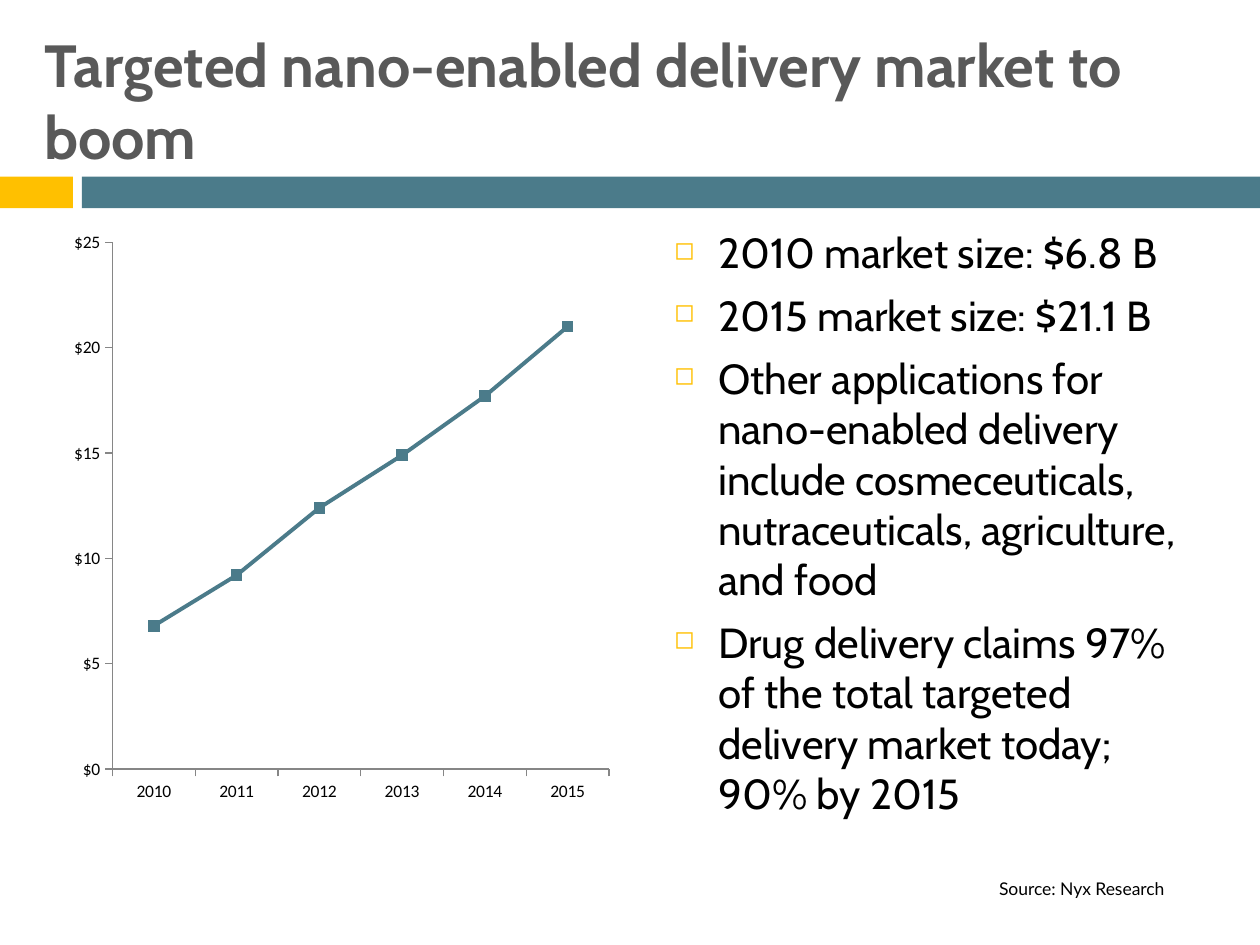
from dataclasses import dataclass

from lxml.etree import SubElement
from pptx import Presentation
from pptx.chart.data import CategoryChartData
from pptx.dml.color import RGBColor as RGB
from pptx.enum.chart import XL_CHART_TYPE as ChartType
from pptx.enum.chart import XL_MARKER_STYLE as Marker
from pptx.enum.chart import XL_TICK_MARK as Tick
from pptx.enum.shapes import MSO_SHAPE as Shape
from pptx.enum.text import MSO_ANCHOR as Anchor
from pptx.oxml.ns import qn
from pptx.util import Cm, Pt

# Content
TITLE = "Targeted nano-enabled delivery market to boom"
POINTS = [
    "2010 market size: $6.8 B",
    "2015 market size: $21.1 B",
    "Other applications for nano-enabled delivery include cosmeceuticals, "
    "nutraceuticals, agriculture, and food",
    "Drug delivery claims 97% of the total targeted delivery market today; 90% by 2015",
]
SOURCE = "Source: Nyx Research"
MARKET = {"2010": 6.8, "2011": 9.2, "2012": 12.4, "2013": 14.9, "2014": 17.7, "2015": 21}


@dataclass(frozen=True)
class Theme:
    teal: str = "4B7B8A"
    gold: str = "FFC000"
    grey: str = "595959"
    axis: str = "868686"
    black: str = "000000"
    font: str = "Cabin"
    axis_font: str = "Calibri"
    source_font: str = "Lato"
    title_size: int = 34
    body_size: int = 24
    small_size: int = 10


THEME = Theme()

# Layout in centimetres
PAGE_W, PAGE_H = 25.4, 19.05
BAND_TOP, BAND_H = 3.56, 0.64
GOLD_W, BAND_GAP = 1.47, 0.18
CONTENT_TOP = 4.45
BULLET_INDENT = 0.89


def style_font(font, size, color, name=THEME.font, bold=False):
    font.size, font.name, font.bold = Pt(size), name, bold
    font.color.rgb = RGB.from_string(color)


def add_band(page, left, width, color):
    band = page.shapes.add_shape(Shape.RECTANGLE, Cm(left), Cm(BAND_TOP), Cm(width), Cm(BAND_H))
    band.shadow.inherit = False
    band.fill.solid()
    band.fill.fore_color.rgb = RGB.from_string(color)
    band.line.fill.background()


def add_text(page, area, lines, size, color, name=THEME.font, bold=False, wrap=True):
    frame = page.shapes.add_textbox(*map(Cm, area)).text_frame
    frame.word_wrap = wrap
    frame.text = "\n".join(lines)
    for para in frame.paragraphs:
        for span in para.runs:
            style_font(span.font, size, color, name, bold)
    return frame


def add_bullet(para):
    para.space_before = Pt(7)
    props = para._p.get_or_add_pPr()
    props.set("marL", str(Cm(BULLET_INDENT)))
    props.set("indent", str(-Cm(BULLET_INDENT)))
    SubElement(SubElement(props, qn("a:buClr")), qn("a:srgbClr"), val=THEME.gold)
    SubElement(props, qn("a:buSzPct"), val="60000")
    SubElement(props, qn("a:buChar"), char="◻")


def add_market_chart(page, area):
    data = CategoryChartData()
    data.categories = list(MARKET)
    data.add_series("Series 1", list(MARKET.values()))
    chart = page.shapes.add_chart(ChartType.LINE_MARKERS, *map(Cm, area), data).chart
    chart.has_legend = chart.has_title = False
    style_font(chart.font, THEME.small_size, THEME.black)

    # Axes
    for axis in (chart.category_axis, chart.value_axis):
        axis.has_major_gridlines = False
        axis.major_tick_mark, axis.minor_tick_mark = Tick.OUTSIDE, Tick.NONE
        axis.format.line.color.rgb = RGB.from_string(THEME.axis)
        axis.format.line.width = Pt(0.75)
        style_font(axis.tick_labels.font, THEME.small_size, THEME.black, THEME.axis_font)
    scale = chart.value_axis
    scale.minimum_scale, scale.maximum_scale, scale.major_unit = 0, 25, 5
    scale.tick_labels.number_format = '"$"#,##0'
    scale.tick_labels.number_format_is_linked = False

    # Line and markers
    teal = RGB.from_string(THEME.teal)
    chart.plots[0].vary_by_categories = False
    series = chart.plots[0].series[0]
    series.smooth = False
    series.format.line.color.rgb = teal
    series.format.line.width = Pt(2.25)
    series.marker.style, series.marker.size = Marker.SQUARE, 6
    series.marker.format.fill.solid()
    series.marker.format.fill.fore_color.rgb = teal
    series.marker.format.line.color.rgb = teal


def main():
    deck = Presentation()
    deck.slide_width, deck.slide_height = Cm(PAGE_W), Cm(PAGE_H)
    page = deck.slides.add_slide(deck.slide_layouts[6])

    # Two-colour band under the title
    teal_left = GOLD_W + BAND_GAP
    add_band(page, 0, GOLD_W, THEME.gold)
    add_band(page, teal_left, PAGE_W - teal_left, THEME.teal)

    # Title
    title = add_text(page, (0.64, 0.64, 24.76, 2.74), [TITLE],
                     THEME.title_size, THEME.grey, bold=True)
    title.vertical_anchor = Anchor.MIDDLE

    # Bullet points
    body = add_text(page, (13.34, CONTENT_TOP, 10.8, 12.57), POINTS,
                    THEME.body_size, THEME.black)
    for para in body.paragraphs:
        add_bullet(para)

    # Chart and its source
    add_market_chart(page, (1.27, CONTENT_TOP, 11.23, 11.94))
    add_text(page, (19.89, 17.58, 3.94, 0.69), [SOURCE],
             THEME.small_size, THEME.black, THEME.source_font, wrap=False)

    deck.save("out.pptx")


if __name__ == "__main__":
    main()
